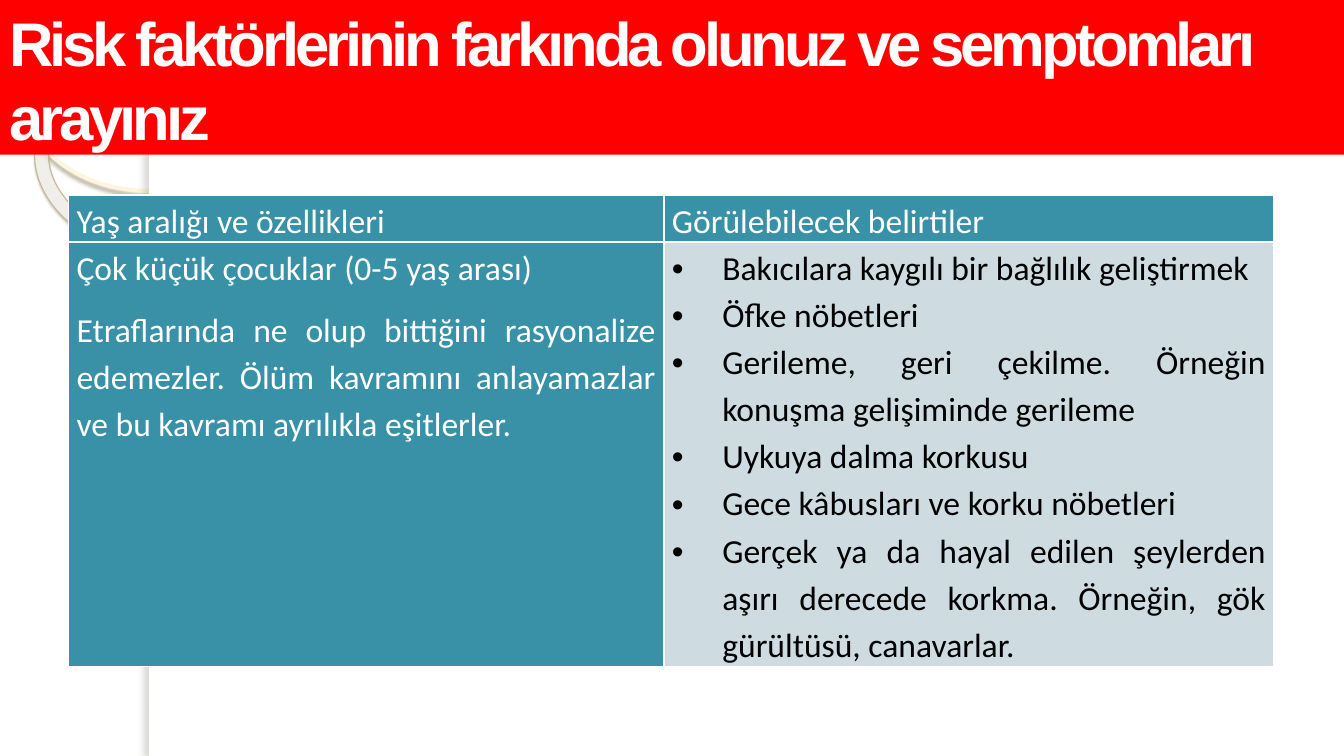
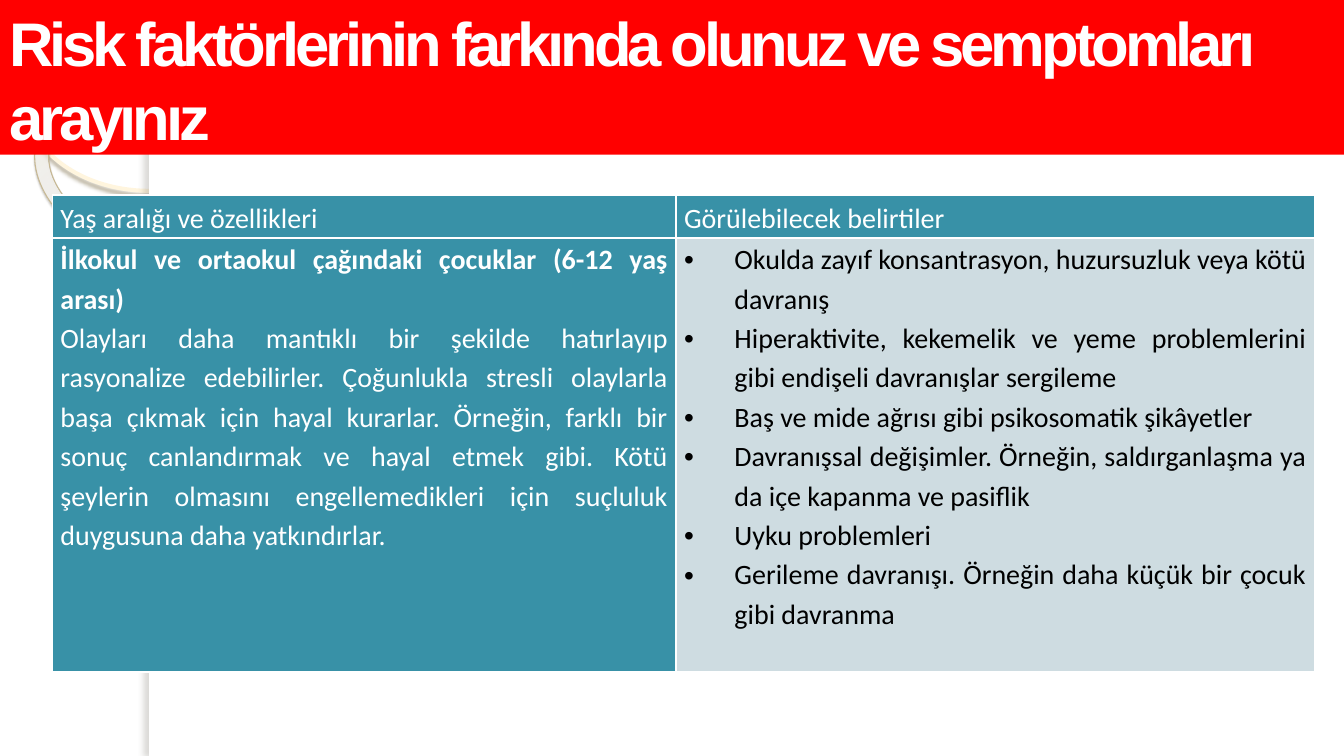
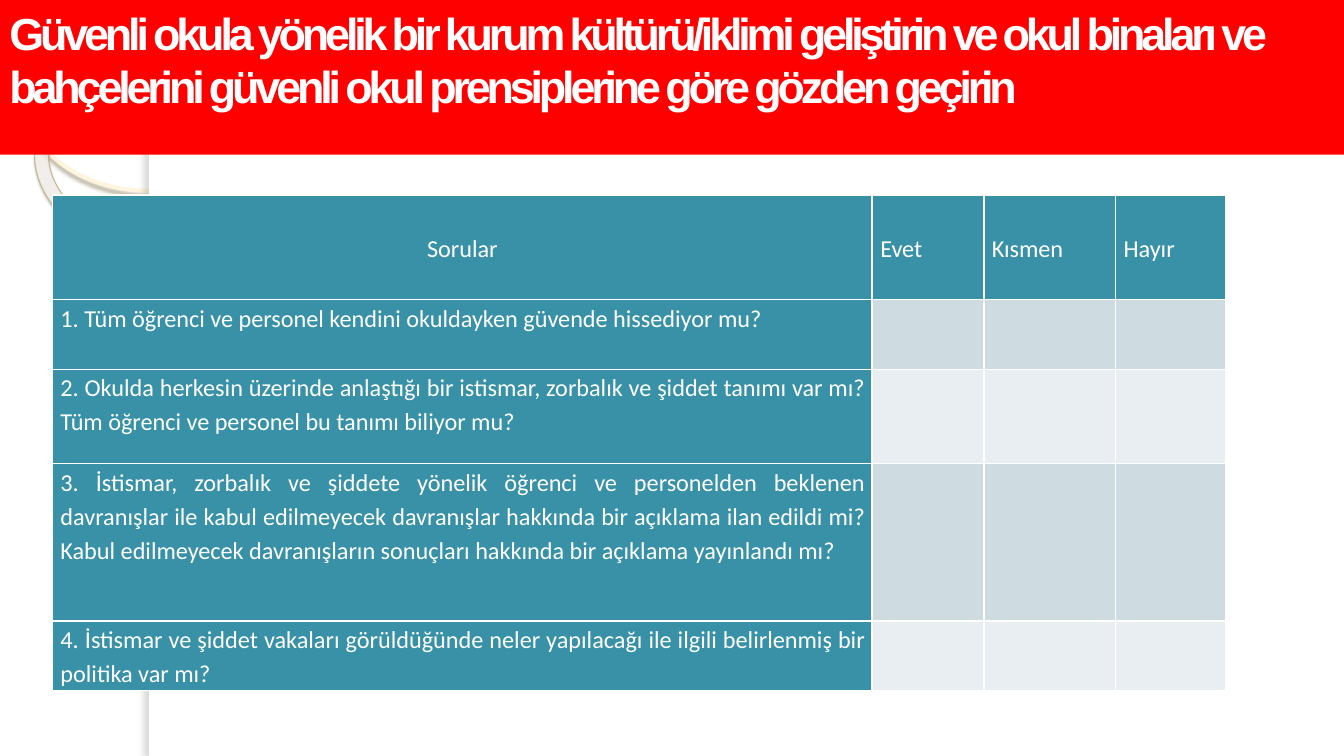
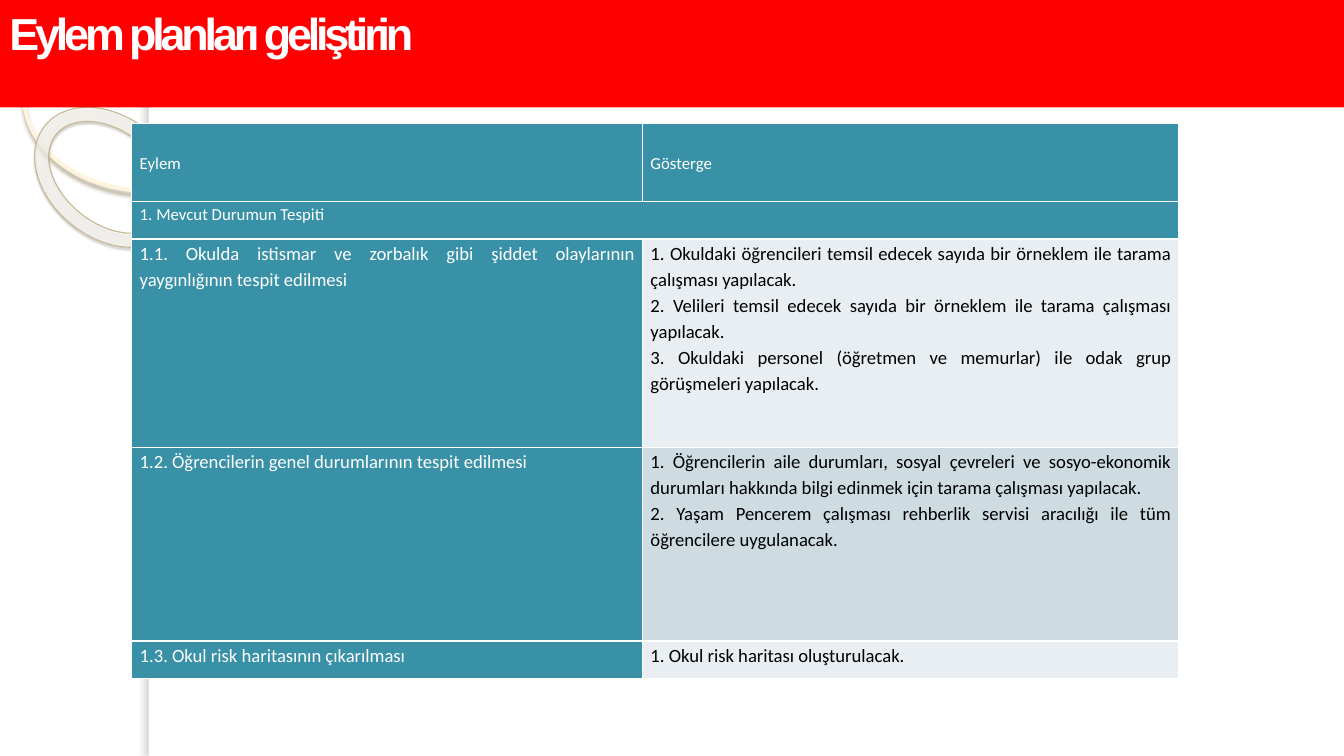
from lxml.etree import SubElement
from pptx import Presentation
from pptx.dml.color import RGBColor
from pptx.enum.shapes import MSO_SHAPE as SHAPE
from pptx.enum.text import MSO_ANCHOR as ANCHOR, MSO_AUTO_SIZE as AUTOSIZE, PP_ALIGN as ALIGN
from pptx.oxml import parse_xml
from pptx.oxml.ns import nsdecls, qn
from pptx.util import Inches, Pt

WIDTH = 10
HEIGHT = WIDTH * 9 / 16
PANEL_LEFT = 1.11
BULLET_INDENT = Pt(27)

RED = RGBColor(0xFF, 0x00, 0x00)
WHITE = RGBColor(0xFF, 0xFF, 0xFF)
BLACK = RGBColor(0x00, 0x00, 0x00)
TEAL = RGBColor(0x38, 0x91, 0xA7)
BAND_ODD = RGBColor(0xCE, 0xDC, 0xE1)
BAND_EVEN = RGBColor(0xE8, 0xEE, 0xF1)
CREAM = RGBColor(0xFF, 0xF5, 0xDE)
SAND = RGBColor(0xC7, 0xB8, 0x93)
RING_SHADE = RGBColor(0xB0, 0xA6, 0x8F)
DONUT_SHADE = RGBColor(0x5A, 0x54, 0x44)
EDGE_SHADE = RGBColor(0x73, 0x6F, 0x63)
DONUT_STOPS = [(0, "FFFCF6", 70), (70, "FFFEFB", 55), (100, "F0D28E", 60)]

# Content: a cell is a list of paragraphs, None joins a cell to the one on its left
RISK_TITLE = "Risk faktörlerinin farkında olunuz ve semptomları arayınız"
AGE_HEADER = [["Yaş aralığı ve özellikleri"], ["Görülebilecek belirtiler"]]
BLANK = [[], [], []]

SLIDES = [
    dict(
        title=RISK_TITLE, title_size=33, band=1.15, at=(0.51, 1.45),
        cols=[4.43, 4.54], rows=[0.34, 3.1], sizes=[18, 18],
        bullets=True, lead=dict(after=8),
        cells=[
            AGE_HEADER,
            [["Çok küçük çocuklar (0-5 yaş arası)",
              "Etraflarında ne olup bittiğini rasyonalize edemezler. Ölüm kavramını "
              "anlayamazlar ve bu kavramı ayrılıkla eşitlerler."],
             ["Bakıcılara kaygılı bir bağlılık geliştirmek",
              "Öfke nöbetleri",
              "Gerileme, geri çekilme. Örneğin konuşma gelişiminde gerileme",
              "Uykuya dalma korkusu",
              "Gece kâbusları ve korku nöbetleri",
              "Gerçek ya da hayal edilen şeylerden aşırı derecede korkma. "
              "Örneğin, gök gürültüsü, canavarlar."]],
        ]),
    dict(
        title=RISK_TITLE, title_size=33, band=1.15, at=(0.39, 1.45),
        cols=[4.64, 4.75], rows=[0.32, 3.23], sizes=[15, 15],
        bullets=True, lead=dict(bold=True),
        cells=[
            AGE_HEADER,
            [["İlkokul ve ortaokul çağındaki çocuklar (6-12 yaş arası)",
              "Olayları daha mantıklı bir şekilde hatırlayıp rasyonalize edebilirler. "
              "Çoğunlukla stresli olaylarla başa çıkmak için hayal kurarlar. Örneğin, "
              "farklı bir sonuç canlandırmak ve hayal etmek gibi. Kötü şeylerin olmasını "
              "engellemedikleri için suçluluk duygusuna daha yatkındırlar."],
             ["Okulda zayıf konsantrasyon, huzursuzluk veya kötü davranış",
              "Hiperaktivite, kekemelik ve yeme problemlerini gibi endişeli davranışlar "
              "sergileme",
              "Baş ve mide ağrısı gibi psikosomatik şikâyetler",
              "Davranışsal değişimler. Örneğin, saldırganlaşma ya da içe kapanma ve pasiflik",
              "Uyku problemleri",
              "Gerileme davranışı. Örneğin daha küçük bir çocuk gibi davranma"]],
        ]),
    dict(
        title="Güvenli okula yönelik bir kurum kültürü/iklimi geliştirin ve okul binaları "
              "ve bahçelerini güvenli okul prensiplerine göre gözden geçirin",
        title_size=24, band=1.15, at=(0.39, 1.45),
        cols=[6.1, 0.83, 0.98, 0.82], rows=[0.78, 0.52, 0.7, 1.17, 0.52], sizes=[13] * 5,
        first_align=ALIGN.CENTER,
        cells=[
            [["Sorular"], ["Evet"], ["Kısmen"], ["Hayır"]],
            [["1. Tüm öğrenci ve personel kendini okuldayken güvende hissediyor mu?"], *BLANK],
            [["2. Okulda herkesin üzerinde anlaştığı bir istismar, zorbalık ve şiddet tanımı "
              "var mı? Tüm öğrenci ve personel bu tanımı biliyor mu?"], *BLANK],
            [["3. İstismar, zorbalık ve şiddete yönelik öğrenci ve personelden beklenen "
              "davranışlar ile kabul edilmeyecek davranışlar hakkında bir açıklama ilan "
              "edildi mi? Kabul edilmeyecek davranışların sonuçları hakkında bir açıklama "
              "yayınlandı mı?"], *BLANK],
            [["4. İstismar ve şiddet vakaları görüldüğünde neler yapılacağı ile ilgili "
              "belirlenmiş bir politika var mı?"], *BLANK],
        ]),
    dict(
        title="Eylem planları geliştirin", title_size=24, band=0.8, at=(0.98, 0.92),
        cols=[3.8, 3.99], rows=[0.58, 0.28, 1.55, 1.44, 0.28], sizes=[9, 9, 10, 10, 10],
        cells=[
            [["Eylem"], ["Gösterge"]],
            [["1. Mevcut Durumun Tespiti"], None],
            [["1.1. Okulda istismar ve zorbalık gibi şiddet olaylarının yaygınlığının tespit "
              "edilmesi"],
             ["1. Okuldaki öğrencileri temsil edecek sayıda bir örneklem ile tarama çalışması "
              "yapılacak.",
              "2. Velileri temsil edecek sayıda bir örneklem ile tarama çalışması yapılacak.",
              "3. Okuldaki personel (öğretmen ve memurlar) ile odak grup görüşmeleri "
              "yapılacak."]],
            [["1.2. Öğrencilerin genel durumlarının tespit edilmesi"],
             ["1. Öğrencilerin aile durumları, sosyal çevreleri ve sosyo-ekonomik durumları "
              "hakkında bilgi edinmek için tarama çalışması yapılacak.",
              "2. Yaşam Pencerem çalışması rehberlik servisi aracılığı ile tüm öğrencilere "
              "uygulanacak."]],
            [["1.3. Okul risk haritasının çıkarılması"],
             ["1. Okul risk haritası oluşturulacak."]],
        ]),
]


def write(para, text, *, size, color, font="Calibri", bold=False, align=ALIGN.JUSTIFY,
          spacing=1.15, after=0, tracking=0, bullet=False):
    run = para.add_run()
    run.text = text
    run.font.size, run.font.name, run.font.bold = Pt(size), font, bold
    run.font.color.rgb = color
    if tracking:
        run.font._element.set("spc", str(round(tracking * 100)))
    para.alignment, para.line_spacing = align, spacing
    para.space_before, para.space_after = Pt(0), Pt(after)
    if bullet:
        props = para._p.get_or_add_pPr()
        props.set("marL", str(BULLET_INDENT))
        props.set("indent", str(-BULLET_INDENT))
        SubElement(props, qn("a:buFont"), typeface="Arial")
        SubElement(props, qn("a:buChar"), char="•")


def set_insets(box, side, top):
    box.margin_left = box.margin_right = Inches(side)
    box.margin_top = box.margin_bottom = Inches(top)


def add_decor(slide, kind, at, fill=None, line=None, shadow=None):
    """Draw a background shape; line is (colour, pt), shadow (colour, alpha, blur, dist, angle)."""
    shape = slide.shapes.add_shape(kind, *map(Inches, at))
    if fill is None:
        shape.fill.background()
    else:
        shape.fill.solid()
        shape.fill.fore_color.rgb = fill
    if line:
        shape.line.color.rgb, shape.line.width = line[0], Pt(line[1])
    else:
        shape.line.fill.background()
    shape.shadow.inherit = False
    if shadow:
        color, alpha, blur, dist, angle = shadow
        effects = shape.element.spPr.find(qn("a:effectLst"))
        outer = SubElement(effects, qn("a:outerShdw"), blurRad=str(Pt(blur)), dist=str(Pt(dist)),
                           dir=str(angle * 60000), algn="ctr", rotWithShape="0")
        tint = SubElement(outer, qn("a:srgbClr"), val=str(color))
        SubElement(tint, qn("a:alpha"), val=str(alpha * 1000))
    return shape


def decorate(layout, slide):
    """Draw the rings and the white panel once, then hand them to the layout."""
    ring = add_decor(slide, SHAPE.OVAL, (0.18, 0.02, 1.86, 1.4), line=(CREAM, 2.15),
                     shadow=(RING_SHADE, 85, 2, 2, 90))
    donut = add_decor(slide, SHAPE.DONUT, (0.2, 0.87, 1.23, 0.9), line=(SAND, 0.58),
                      shadow=(DONUT_SHADE, 35, 1, 1.2, 75))
    donut.rotation, donut.adjustments[0] = 38.6, 0.118
    stops = "".join(
        f'<a:gs pos="{pos * 1000}"><a:srgbClr val="{color}"><a:alpha val="{alpha * 1000}"/>'
        f'</a:srgbClr></a:gs>' for pos, color, alpha in DONUT_STOPS)
    gradient = parse_xml(
        f'<a:gradFill {nsdecls("a")} rotWithShape="1"><a:gsLst>{stops}</a:gsLst>'
        '<a:path path="circle"><a:fillToRect l="-408000" t="-50000" r="508000" b="150000"/>'
        '</a:path></a:gradFill>')
    props = donut.element.spPr
    props.replace(props.find(qn("a:noFill")), gradient)
    panel = add_decor(slide, SHAPE.RECTANGLE, (PANEL_LEFT, 0, WIDTH - PANEL_LEFT, HEIGHT), WHITE)
    edge = add_decor(slide, SHAPE.RECTANGLE, (PANEL_LEFT, 0, 0.08, HEIGHT), WHITE,
                     shadow=(EDGE_SHADE, 25, 3, 3, 180))
    for number, part in enumerate((ring, donut, panel, edge)):
        part.element.nvSpPr.cNvPr.set("id", str(20 + number))
        layout.shapes.element.append(part.element)


def add_title(slide, text, size, height):
    title = slide.shapes.title
    title.left = title.top = 0
    title.width, title.height = Inches(WIDTH), Inches(height)
    title.fill.solid()
    title.fill.fore_color.rgb = RED
    frame = title.text_frame
    frame.word_wrap, frame.auto_size = True, AUTOSIZE.NONE
    frame.vertical_anchor = ANCHOR.TOP
    set_insets(frame, 0.07, 0.04)
    write(frame.paragraphs[0], text, size=size, color=WHITE, font="Arial", bold=True,
          align=ALIGN.LEFT, spacing=1.0, tracking=-2.2)


def set_borders(cell):
    props = cell._tc.get_or_add_tcPr()
    for place, side in enumerate("LRTB"):
        props.insert(place, parse_xml(
            f'<a:ln{side} {nsdecls("a")} w="{Pt(1)}"><a:solidFill>'
            f'<a:srgbClr val="{WHITE}"/></a:solidFill></a:ln{side}>'))


def add_grid(slide, content):
    cols, rows = content["cols"], content["rows"]
    left, top = content["at"]
    table = slide.shapes.add_table(len(rows), len(cols), Inches(left), Inches(top),
                                   Inches(sum(cols)), Inches(sum(rows))).table
    table.horz_banding = False
    for column, width in zip(table.columns, cols):
        column.width = Inches(width)
    for row, height in zip(table.rows, rows):
        row.height = Inches(height)

    for r, line in enumerate(content["cells"]):
        for c, paragraphs in enumerate(line):
            cell = table.cell(r, c)
            header, shaded = r == 0, r == 0 or c == 0
            set_insets(cell, 0.06, 0)
            cell.vertical_anchor = ANCHOR.MIDDLE if header else ANCHOR.TOP
            cell.fill.solid()
            cell.fill.fore_color.rgb = TEAL if shaded else BAND_ODD if r % 2 else BAND_EVEN
            set_borders(cell)
            if paragraphs is None:
                table.cell(r, c - 1).merge(cell)
                continue
            for n, text in enumerate(paragraphs):
                style = dict(size=content["sizes"][r], color=WHITE if shaded else BLACK,
                             bullet=content.get("bullets", False) and not shaded)
                if (r, c) == (0, 0):
                    style["align"] = content.get("first_align", ALIGN.JUSTIFY)
                if (r, c, n) == (1, 0, 0):
                    style.update(content.get("lead", {}))
                frame = cell.text_frame
                write(frame.add_paragraph() if n else frame.paragraphs[0], text, **style)


def main():
    deck = Presentation()
    deck.slide_width, deck.slide_height = Inches(WIDTH), Inches(HEIGHT)
    layout = deck.slide_layouts.get_by_name("Title Only")
    for number, content in enumerate(SLIDES):
        slide = deck.slides.add_slide(layout)
        if number == 0:
            decorate(layout, slide)
        add_title(slide, content["title"], content["title_size"], content["band"])
        add_grid(slide, content)
    deck.save("out.pptx")


if __name__ == "__main__":
    main()
